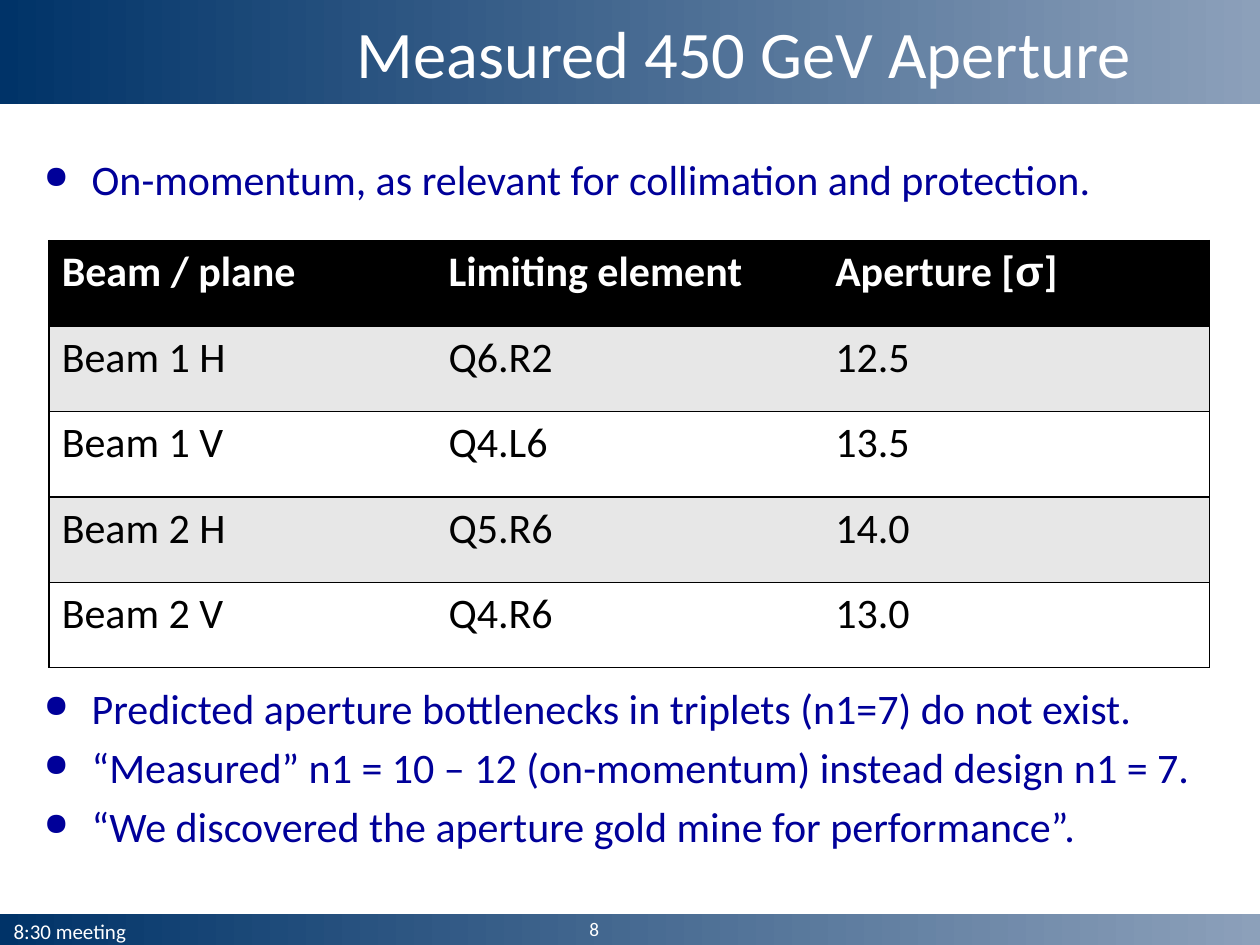
from lxml import etree
from pptx import Presentation
from pptx.dml.color import RGBColor
from pptx.enum.shapes import MSO_SHAPE
from pptx.enum.text import MSO_ANCHOR, PP_ALIGN
from pptx.oxml.ns import qn
from pptx.util import Inches, Pt

RECTANGLE = MSO_SHAPE.RECTANGLE
TOP, MIDDLE, BOTTOM = MSO_ANCHOR.TOP, MSO_ANCHOR.MIDDLE, MSO_ANCHOR.BOTTOM
LEFT, RIGHT = PP_ALIGN.LEFT, PP_ALIGN.RIGHT

FONT = "Calibri"
WHITE, BLACK, GREY = "FFFFFF", "000000", "E7E7E7"
BAR_START, BAR_END, BULLET_BLUE = "003368", "8CA0BA", "000099"

APERTURES = [
    ("Beam / plane", "Limiting element", "Aperture [σ]"),
    ("Beam 1 H", "Q6.R2", "12.5"),
    ("Beam 1 V", "Q4.L6", "13.5"),
    ("Beam 2 H", "Q5.R6", "14.0"),
    ("Beam 2 V", "Q4.R6", "13.0"),
]
TABLE_GAP, BULLET_GAP = 273.7, 4.8
BULLETS = [
    ("On-momentum, as relevant for collimation and protection.", 0),
    ("Predicted aperture bottlenecks in triplets (n1=7) do not exist.", TABLE_GAP),
    ("“Measured” n1 = 10 – 12 (on-momentum) instead design n1 = 7.", BULLET_GAP),
    ("“We discovered the aperture gold mine for performance”.", BULLET_GAP),
]


def color(value):
    return RGBColor.from_string(value)


def set_font(font, size, value, bold=False):
    font.name = FONT
    font.size = Pt(size)
    font.bold = bold
    font.color.rgb = color(value)


def add_bar(slide, box):
    shape = slide.shapes.add_shape(RECTANGLE, *map(Inches, box))
    shape.shadow.inherit = False
    shape.line.fill.background()
    shape.fill.gradient()
    shape.fill.gradient_angle = 0
    for stop, value, position in zip(shape.fill.gradient_stops, (BAR_START, BAR_END), (0, 1)):
        stop.color.rgb = color(value)
        stop.position = position


def add_text_box(slide, box, anchor):
    shape = slide.shapes.add_textbox(*map(Inches, box))
    shape.text_frame.word_wrap = True
    shape.text_frame.vertical_anchor = anchor
    return shape


def add_label(slide, box, text, size, anchor, alignment=LEFT):
    paragraph = add_text_box(slide, box, anchor).text_frame.paragraphs[0]
    paragraph.text = text
    paragraph.alignment = alignment
    set_font(paragraph.font, size, WHITE)


def add_header(slide, box):
    left, top, width, height = box
    add_bar(slide, box)
    add_label(slide, (left + 0.83, top, width - 1.75, height),
              "Measured 450 GeV Aperture", 38, MIDDLE, RIGHT)


def add_footer(slide, box):
    left, top, width, height = box
    add_bar(slide, box)
    add_label(slide, (left + 0.01, top + 0.04, 3.97, height), "8:30 meeting", 12, BOTTOM)
    add_label(slide, (left + 4.58, top + 0.01, 1.25, height), "8", 11, BOTTOM)


def add_bullets(slide, box, bullets):
    shape = add_text_box(slide, box, TOP)
    shape.fill.solid()
    shape.fill.fore_color.rgb = color(WHITE)
    frame = shape.text_frame
    for index, (text, gap) in enumerate(bullets):
        paragraph = frame.add_paragraph() if index else frame.paragraphs[0]
        paragraph.text = text
        properties = paragraph._p.get_or_add_pPr()
        properties.set("marL", str(Inches(0.38)))
        properties.set("indent", str(Inches(-0.38)))
        bullet_color = etree.SubElement(properties, qn("a:buClr"))
        etree.SubElement(bullet_color, qn("a:srgbClr"), val=BULLET_BLUE)
        etree.SubElement(properties, qn("a:buSzPct"), val="75000")
        etree.SubElement(properties, qn("a:buChar"), char="●")
        paragraph.space_before = Pt(gap)
        set_font(paragraph.font, 24, BULLET_BLUE)


def set_borders(cell, visible):
    properties = cell._tc.get_or_add_tcPr()
    for side in "LRTB":
        line = etree.SubElement(properties, qn(f"a:ln{side}"), w=str(Pt(1)))
        if side in visible:
            fill = etree.SubElement(line, qn("a:solidFill"))
            etree.SubElement(fill, qn("a:srgbClr"), val=BLACK)
        else:
            etree.SubElement(line, qn("a:noFill"))


def fill_cell(cell, text, background, foreground, bold):
    paragraph = cell.text_frame.paragraphs[0]
    before, sigma, after = text.partition("σ")
    for part in filter(None, (before, sigma, after)):
        run = paragraph.add_run()
        run.text = part
        set_font(run.font, 24, foreground, bold)
        if part == "σ":
            run.font.name = "Arial"
    cell.fill.solid()
    cell.fill.fore_color.rgb = color(background)


def add_aperture_table(slide, box, rows):
    last_column = len(rows[0]) - 1
    table = slide.shapes.add_table(len(rows), len(rows[0]), *map(Inches, box)).table
    for row_index, row in enumerate(rows):
        header = row_index == 0
        background = BLACK if header else GREY if row_index % 2 else WHITE
        for column_index, text in enumerate(row):
            cell = table.cell(row_index, column_index)
            sides = "TB" + "L" * (column_index == 0) + "R" * (column_index == last_column)
            set_borders(cell, sides)
            fill_cell(cell, text, background, WHITE if header else BLACK, header)


def main():
    presentation = Presentation()
    presentation.slide_width = Inches(10)
    presentation.slide_height = Inches(7.5)
    slide = presentation.slides.add_slide(presentation.slide_layouts[6])
    add_bullets(slide, (0.25, 1.17, 9.5, 5.83), BULLETS)
    add_footer(slide, (0, 7.25, 10, 0.25))
    add_header(slide, (0, 0, 10, 0.83))
    add_aperture_table(slide, (0.39, 1.91, 9.21, 3.39), APERTURES)
    presentation.save("out.pptx")


if __name__ == "__main__":
    main()
